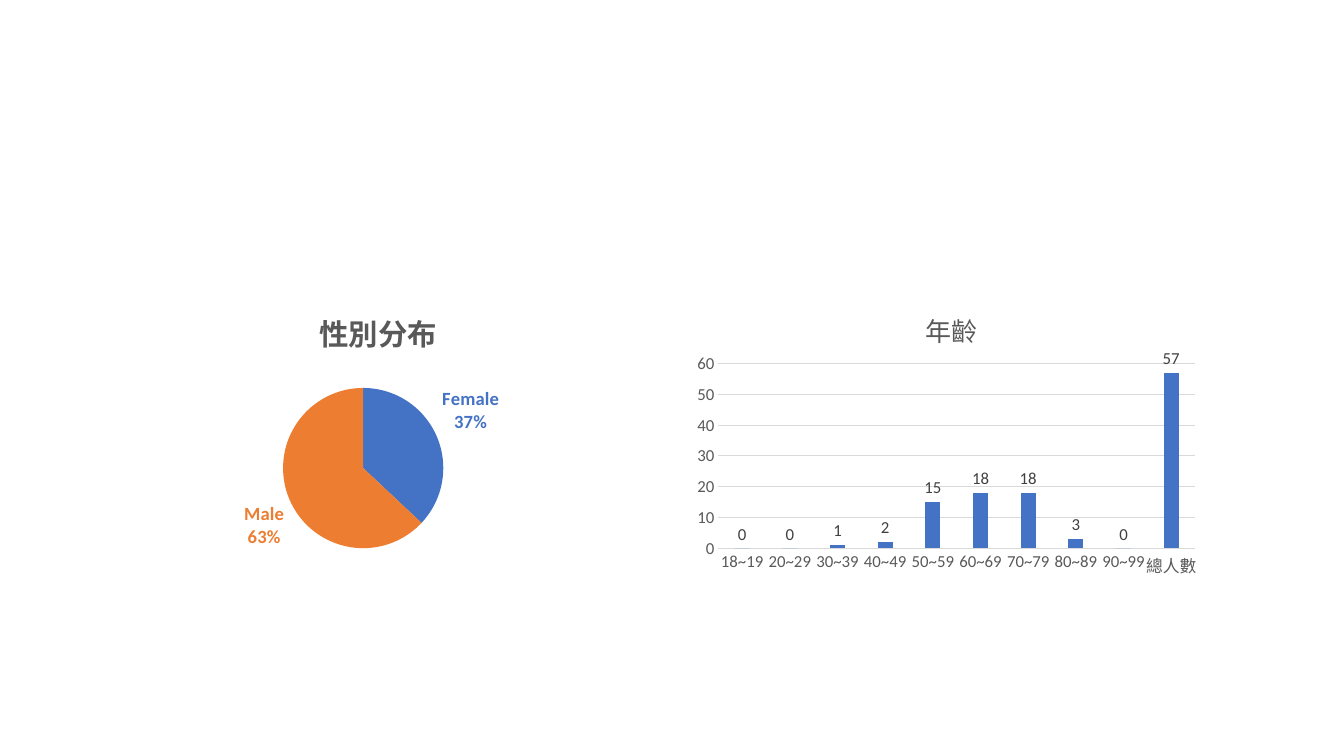
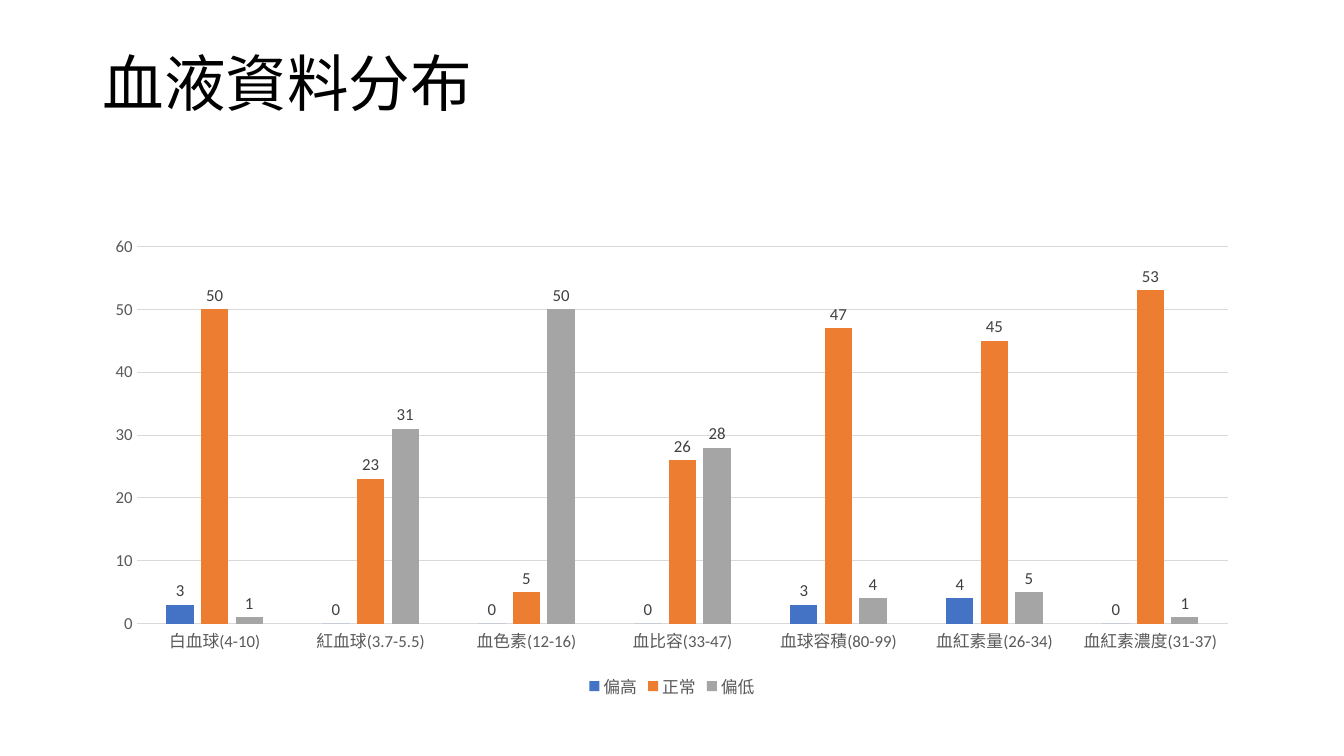
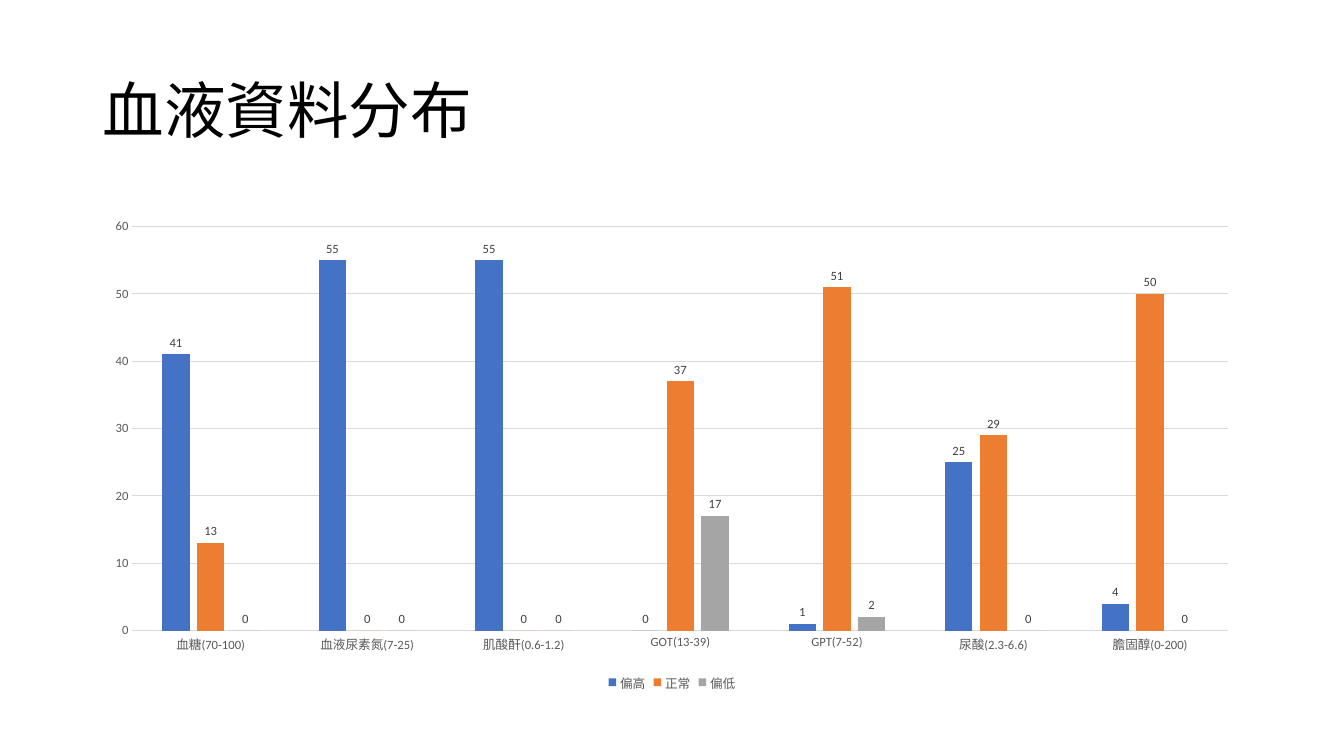
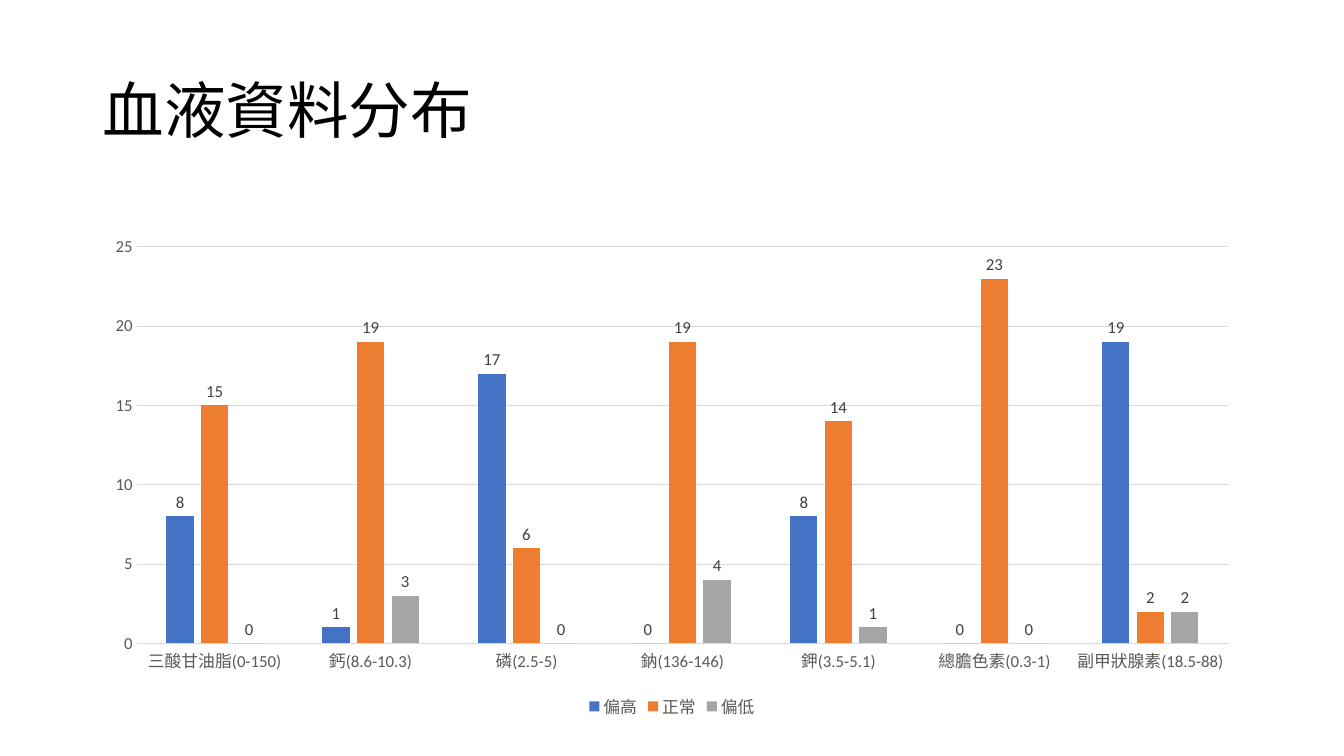
import pptx
import pptx.chart.data
import pptx.dml.color
import pptx.enum.chart
import pptx.enum.text
import pptx.oxml
import pptx.oxml.ns
import pptx.util
from pptx.util import Cm

RGBColor = pptx.dml.color.RGBColor
ChartType = pptx.enum.chart.XL_CHART_TYPE
qn = pptx.oxml.ns.qn

# Shared style
FONT = "Calibri"
BLACK = RGBColor(0x00, 0x00, 0x00)
TEXT_GREY = RGBColor(0x59, 0x59, 0x59)
LABEL_GREY = RGBColor(0x40, 0x40, 0x40)
GRID_GREY = RGBColor(0xD9, 0xD9, 0xD9)
BLUE = RGBColor(0x44, 0x72, 0xC4)
ORANGE = RGBColor(0xED, 0x7D, 0x31)
SILVER = RGBColor(0xA5, 0xA5, 0xA5)
PALETTE = (BLUE, ORANGE, SILVER)

MARGIN, CONTENT_W = Cm(2.33), Cm(29.21)
TITLE_TOP = Cm(1.01)
LEVELS = ("偏高", "正常", "偏低")


def set_font(font, size, color, bold=False):
    font.name = FONT
    font.size = pptx.util.Pt(size)
    font.color.rgb = color
    font.bold = bold


def write_text(tf, text, size=12, color=BLACK, bold=False, align=None, spacing=None):
    p = tf.paragraphs[0]
    p.alignment = align
    p.line_spacing = spacing
    r = p.add_run()
    r.text = text
    set_font(r.font, size, color, bold)


def place(parent, index, inner=False, **fractions):
    """Give a chart part a fixed place, in fractions of the chart."""
    for old in parent.findall(qn("c:layout")):
        parent.remove(old)
    target = '<c:layoutTarget val="inner"/>' if inner else ""
    modes = "".join(f'<c:{k}Mode val="edge"/>' for k in fractions if k in "xy")
    sizes = "".join(f'<c:{k} val="{v}"/>' for k, v in fractions.items())
    parent.insert(index, pptx.oxml.parse_xml(
        f"<c:layout {pptx.oxml.ns.nsdecls('c')}><c:manualLayout>"
        f"{target}{modes}{sizes}</c:manualLayout></c:layout>"))


class Deck:
    def __init__(self):
        self.prs = pptx.Presentation()
        self.prs.slide_width, self.prs.slide_height = Cm(33.87), Cm(19.05)
        self.s = None

    def blank_slide(self):
        self.s = self.prs.slides.add_slide(self.prs.slide_layouts[6])

    def titled_slide(self, title, height):
        self.s = self.prs.slides.add_slide(self.prs.slide_layouts[5])
        sp = self.s.shapes.title
        sp.left, sp.top, sp.width, sp.height = MARGIN, TITLE_TOP, CONTENT_W, height
        tf = sp.text_frame
        tf.vertical_anchor = pptx.enum.text.MSO_ANCHOR.MIDDLE
        write_text(tf, title, size=44, align=pptx.enum.text.PP_ALIGN.LEFT, spacing=0.9)

    def chart(self, kind, box, cats, series):
        data = pptx.chart.data.CategoryChartData()
        data.categories = cats
        for name, vals in series.items():
            data.add_series(name, vals)
        chart = self.s.shapes.add_chart(kind, *box, data).chart
        set_font(chart.font, 10, BLACK)
        chart.has_title = chart.has_legend = False
        return chart

    def chart_title(self, chart, text, size, bold=False, **at):
        chart.has_title = True
        title = chart.chart_title
        write_text(title.text_frame, text, size=size, color=TEXT_GREY, bold=bold)
        title.include_in_layout = False
        place(title.element, 1, **at)

    def plot_place(self, chart, **at):
        place(chart.element.find(".//" + qn("c:plotArea")), 0, inner=True, **at)

    def columns(self, box, cats, series, size=12):
        chart = self.chart(ChartType.COLUMN_CLUSTERED, box, cats, series)
        plot = chart.plots[0]
        plot.gap_width, plot.overlap = 219, -27
        plot.vary_by_categories = False
        for ser, color in zip(plot.series, PALETTE):
            ser.format.fill.solid()
            ser.format.fill.fore_color.rgb = color
            labels = ser.data_labels
            labels.show_value = True
            labels.position = pptx.enum.chart.XL_LABEL_POSITION.OUTSIDE_END
            set_font(labels.font, size, LABEL_GREY)
        # Axes and grid
        cat_axis, val_axis = chart.category_axis, chart.value_axis
        for axis in (cat_axis, val_axis):
            axis.major_tick_mark = axis.minor_tick_mark = pptx.enum.chart.XL_TICK_MARK.NONE
            set_font(axis.tick_labels.font, size, TEXT_GREY)
        val_axis.has_major_gridlines = True
        for line in (cat_axis.format.line, val_axis.major_gridlines.format.line):
            line.color.rgb = GRID_GREY
            line.width = pptx.util.Pt(0.75)
        val_axis.format.line.fill.background()
        # Legend, where there is something to tell apart
        if len(series) > 1:
            chart.has_legend = True
            chart.legend.position = pptx.enum.chart.XL_LEGEND_POSITION.BOTTOM
            chart.legend.include_in_layout = False
            set_font(chart.legend.font, size, TEXT_GREY)
        return chart

    def pie(self, box, cats, series, size):
        chart = self.chart(ChartType.PIE, box, cats, series)
        ser = chart.plots[0].series[0]
        for i, color in zip(range(len(cats)), PALETTE):
            point = ser.points[i]
            point.format.fill.solid()
            point.format.fill.fore_color.rgb = color
            set_font(point.data_label.font, size, color, bold=True)
            point.data_label.position = pptx.enum.chart.XL_LABEL_POSITION.OUTSIDE_END
        # Category above percentage
        for label in chart.element.iter(qn("c:dLbl")):
            for tag, on in (("showVal", 0), ("showCatName", 1), ("showPercent", 1)):
                label.find(qn("c:" + tag)).set("val", str(on))
            label.append(pptx.oxml.parse_xml(
                f"<c:separator {pptx.oxml.ns.nsdecls('c')}>\n</c:separator>"))
        return chart


def main():
    deck = Deck()

    # Sex and age
    deck.blank_slide()
    top, width, height = Cm(7.11), Cm(13.06), Cm(7.62)
    ages = [f"{a}~{a // 10 * 10 + 9}" for a in (18, *range(20, 100, 10))]
    counts = (0, 0, 1, 2, 15, 18, 18, 3, 0)
    chart = deck.columns((Cm(17.32), top, width, height), ages + ["總人數"],
                         {"Series 1": (*counts, sum(counts))})
    deck.chart_title(chart, "年齡", 18.6, x=0.45, y=0.07)
    deck.plot_place(chart, x=0.06, y=0.27, w=0.92, h=0.61)
    chart = deck.pie((Cm(2.82), top, width, height), ("Female", "Male"),
                     {"Series 1": (37, 63)}, size=13.3)
    deck.chart_title(chart, "性別分布", 21, bold=True, x=0.39, y=0.07)
    deck.plot_place(chart, x=0.33, y=0.35, w=0.31, h=0.53)

    # Blood values: title height, chart top and height, text size, counts
    blood_slides = (
        (Cm(2.34), Cm(5.72), Cm(11.99), 12, {
            "白血球(4-10)": (3, 50, 1),
            "紅血球(3.7-5.5)": (0, 23, 31),
            "血色素(12-16)": (0, 5, 50),
            "血比容(33-47)": (0, 26, 28),
            "血球容積(80-99)": (3, 47, 4),
            "血紅素量(26-34)": (4, 45, 5),
            "血紅素濃度(31-37)": (0, 53, 1),
        }),
        (Cm(3.68), Cm(5.28), Cm(12.24), 9, {
            "血糖(70-100)": (41, 13, 0),
            "血液尿素氮(7-25)": (55, 0, 0),
            "肌酸酐(0.6-1.2)": (55, 0, 0),
            "GOT(13-39)": (0, 37, 17),
            "GPT(7-52)": (1, 51, 2),
            "尿酸(2.3-6.6)": (25, 29, 0),
            "膽固醇(0-200)": (4, 50, 0),
        }),
        (Cm(3.68), Cm(5.72), Cm(12.5), 12, {
            "三酸甘油脂(0-150)": (8, 15, 0),
            "鈣(8.6-10.3)": (1, 19, 3),
            "磷(2.5-5)": (17, 6, 0),
            "鈉(136-146)": (0, 19, 4),
            "鉀(3.5-5.1)": (8, 14, 1),
            "總膽色素(0.3-1)": (0, 23, 0),
            "副甲狀腺素(18.5-88)": (19, 2, 2),
        }),
    )
    for title_h, chart_top, chart_h, size, tests in blood_slides:
        deck.titled_slide("血液資料分布", title_h)
        deck.columns((MARGIN, chart_top, CONTENT_W, chart_h), list(tests),
                     dict(zip(LEVELS, zip(*tests.values()))), size)

    deck.prs.save("out.pptx")


if __name__ == "__main__":
    main()
